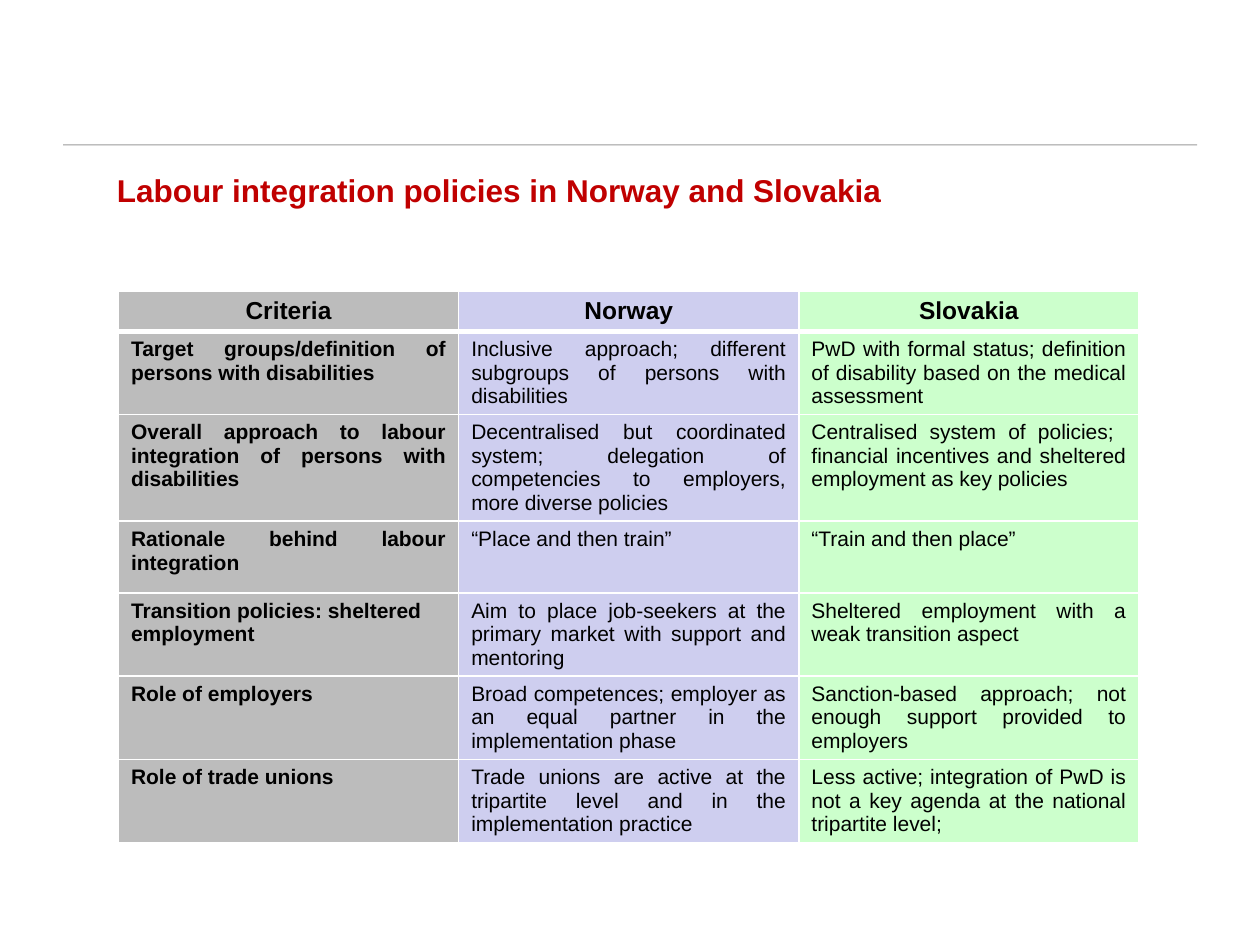
from lxml.etree import SubElement
from pptx import Presentation
from pptx.dml.color import RGBColor
from pptx.enum.shapes import MSO_CONNECTOR
from pptx.enum.text import MSO_AUTO_SIZE, PP_ALIGN
from pptx.oxml.ns import qn
from pptx.util import Inches, Pt

HEADERS = ["Criteria", "Norway", "Slovakia"]
POLICIES = [
    ("Target groups/definition of persons with disabilities",
     "Inclusive approach; different subgroups of persons with disabilities",
     "PwD with formal status; definition of disability based on the medical assessment"),
    ("Overall approach to labour integration of persons with disabilities",
     "Decentralised but coordinated system; delegation of competencies to employers, more diverse policies",
     "Centralised system of policies;  financial incentives and sheltered employment as key policies"),
    ("Rationale behind labour integration",
     "“Place and then train”",
     "“Train and then place”"),
    ("Transition policies: sheltered employment",
     "Aim to place job-seekers at the primary market with support and mentoring",
     "Sheltered employment with a weak transition aspect"),
    ("Role of employers",
     "Broad competences; employer as an equal partner in the implementation phase",
     "Sanction-based approach; not enough support provided to employers"),
    ("Role of trade unions",
     "Trade unions are active at the tripartite level and in the implementation practice",
     "Less active; integration of PwD is not a key agenda at the national tripartite level;"),
]
LEFT_ALIGNED = "Transition policies: sheltered employment"


def colour(value):
    return RGBColor.from_string(value)


class PolicySlide:
    font = "Arial"
    ink = "000000"
    accent = "C00000"
    border = "FFFFFF"
    column_fills = ["BCBCBC", "CECEEF", "CCFFCC"]

    def __init__(self, presentation):
        self.slide = presentation.slides.add_slide(presentation.slide_layouts[6])

    def add_run(self, paragraph, text, size, bold, ink):
        run = paragraph.add_run()
        run.text = text
        run.font.name = self.font
        run.font.size = Pt(size)
        run.font.bold = bold
        run.font.color.rgb = colour(ink)

    def add_rule(self, left, right, top):
        rule = self.slide.shapes.add_connector(
            MSO_CONNECTOR.STRAIGHT, Inches(left), Inches(top), Inches(right), Inches(top))
        rule.line.width = Pt(0.5)
        rule.line.color.rgb = colour(self.ink)
        properties = rule._element.spPr
        ink = properties.find(".//" + qn("a:srgbClr"))
        SubElement(ink, qn("a:alpha"), val="40000")
        SubElement(properties, qn("a:effectLst"))

    def add_title(self, text, left, top, width, height):
        box = self.slide.shapes.add_textbox(
            Inches(left), Inches(top), Inches(width), Inches(height))
        frame = box.text_frame
        frame.word_wrap = True
        frame.auto_size = MSO_AUTO_SIZE.SHAPE_TO_FIT_TEXT
        self.add_run(frame.paragraphs[0], text, 18, True, self.accent)

    def set_border(self, cell, side, points):
        line = SubElement(cell._tc.get_or_add_tcPr(), qn(f"a:ln{side}"), w=str(Pt(points)))
        fill = SubElement(line, qn("a:solidFill"))
        SubElement(fill, qn("a:srgbClr"), val=self.border)

    def fill_cell(self, cell, text, row, column):
        widths = {"L": 1, "R": 1, "T": 3 if row == 1 else 1, "B": 3 if row == 0 else 1}
        for side, points in widths.items():
            self.set_border(cell, side, points)
        cell.fill.solid()
        cell.fill.fore_color.rgb = colour(self.column_fills[column])
        paragraph = cell.text_frame.paragraphs[0]
        if row == 0:
            paragraph.alignment = PP_ALIGN.CENTER
        elif text == LEFT_ALIGNED:
            paragraph.alignment = PP_ALIGN.LEFT
        else:
            paragraph.alignment = PP_ALIGN.JUSTIFY
        self.add_run(paragraph, text, 14 if row == 0 else 12, row == 0 or column == 0, self.ink)

    def add_table(self, rows, left, top, column_width, header_height, row_height):
        columns = len(rows[0])
        height = header_height + row_height * (len(rows) - 1)
        table = self.slide.shapes.add_table(
            len(rows), columns, Inches(left), Inches(top),
            Inches(column_width * columns), Inches(height)).table
        for column in table.columns:
            column.width = Inches(column_width)
        for row, texts in enumerate(rows):
            table.rows[row].height = Inches(row_height if row else header_height)
            for column, text in enumerate(texts):
                self.fill_cell(table.cell(row, column), text, row, column)


def main():
    presentation = Presentation()
    presentation.slide_width = Inches(10)
    presentation.slide_height = Inches(7.5)
    page = PolicySlide(presentation)
    page.add_rule(0.5, 9.5, 1.15)
    page.add_table([HEADERS, *POLICIES], 0.94, 2.31, 2.7, 0.13, 0.57)
    page.add_title("Labour integration policies in Norway and Slovakia", 0.83, 1.31, 7.87, 0.4)
    presentation.save("out.pptx")


if __name__ == "__main__":
    main()
